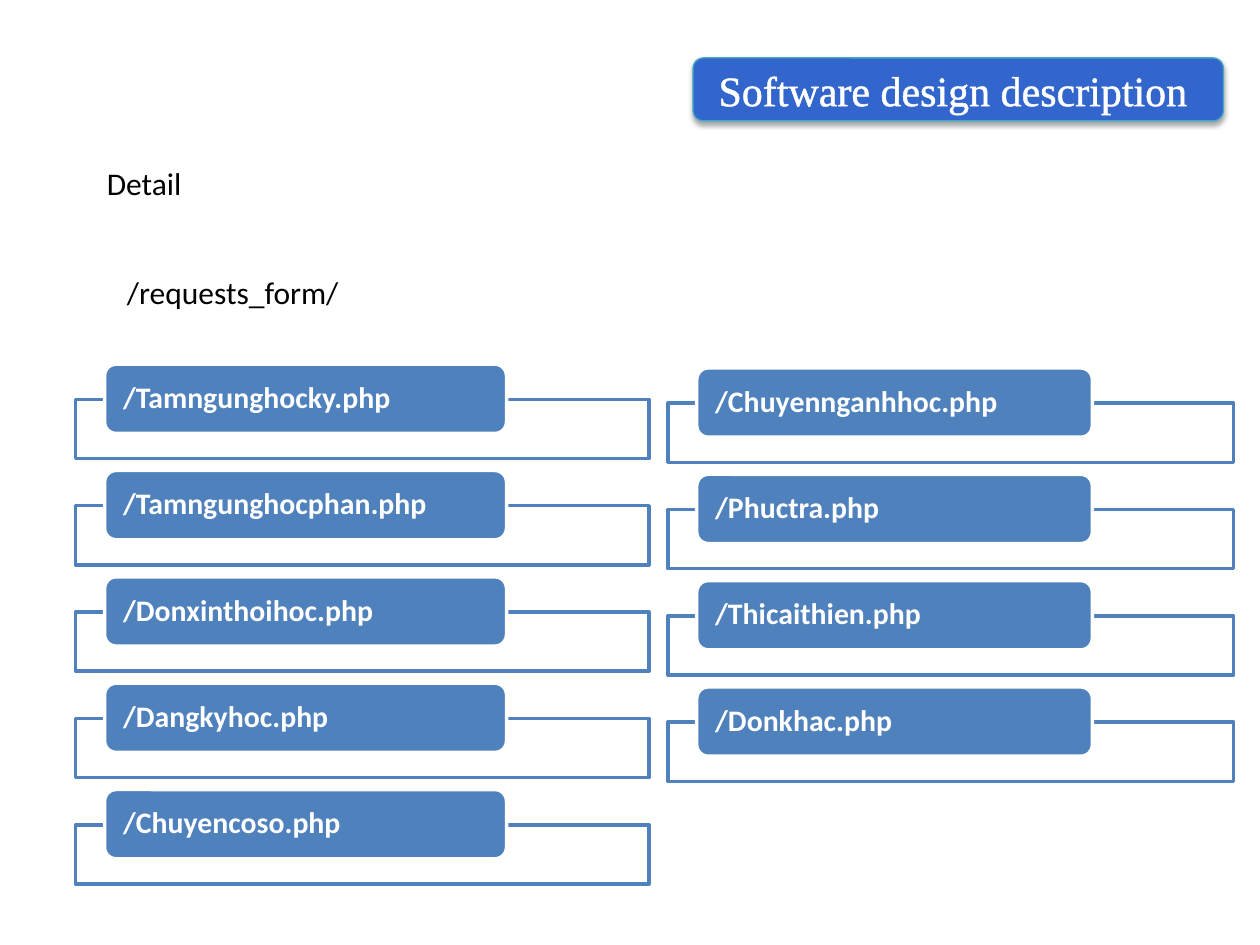
from lxml import etree
from pptx import Presentation
from pptx.dml.color import RGBColor
from pptx.enum.shapes import MSO_SHAPE
from pptx.enum.text import MSO_ANCHOR, MSO_AUTO_SIZE, PP_ALIGN
from pptx.oxml import parse_xml
from pptx.util import Inches, Pt

RECTANGLE = MSO_SHAPE.RECTANGLE
ROUNDED = MSO_SHAPE.ROUNDED_RECTANGLE
MIDDLE = MSO_ANCHOR.MIDDLE
CENTER = PP_ALIGN.CENTER
FIT_SHAPE = MSO_AUTO_SIZE.SHAPE_TO_FIT_TEXT
DRAWING = "http://schemas.openxmlformats.org/drawingml/2006/main"

BLUE = "4F81BD"
WHITE = "FFFFFF"
ROW_STEP = 0.844
COLUMNS = [
    # left, top of first frame, frame width, label width, file names
    (0.6, 3.17, 4.55, 3.19, ["/Tamngunghocky.php", "/Tamngunghocphan.php",
                             "/Donxinthoihoc.php", "/Dangkyhoc.php", "/Chuyencoso.php"]),
    (5.3, 3.2, 4.49, 3.14, ["/Chuyennganhhoc.php", "/Phuctra.php",
                            "/Thicaithien.php", "/Donkhac.php"]),
]


def add_box(shapes, kind, position, fill, line, line_width):
    shape = shapes.add_shape(kind, *[Inches(value) for value in position])
    shape.shadow.inherit = False
    shape.fill.solid()
    shape.fill.fore_color.rgb = RGBColor.from_string(fill)
    shape.line.color.rgb = RGBColor.from_string(line)
    shape.line.width = Pt(line_width)
    return shape


def write(shape, text, size, color, font_name="Calibri", bold=False):
    """Set the shape's only paragraph, format its run and return the paragraph."""
    shape.text_frame.text = text
    paragraph = shape.text_frame.paragraphs[0]
    font = paragraph.runs[0].font
    font.name = font_name
    font.size = Pt(size)
    font.bold = bold
    font.color.rgb = RGBColor.from_string(color)
    return paragraph


presentation = Presentation()
presentation.slide_width = Inches(10)
presentation.slide_height = Inches(7.5)
slide = presentation.slides.add_slide(presentation.slide_layouts[6])

# Folder name and section heading
for text, left, top, width, wrap in [
    ("/requests_form/", 0.91, 2.12, 1.9, False),
    ("Detail", 0.75, 1.25, 3.83, True),
]:
    text_box = slide.shapes.add_textbox(Inches(left), Inches(top), Inches(width), Inches(0.4))
    text_box.text_frame.word_wrap = wrap
    text_box.text_frame.auto_size = FIT_SHAPE
    write(text_box, text, 18, "000000")

# Two columns of files, each a label set over a frame
for left, first_top, frame_width, label_width, files in COLUMNS:
    group = slide.shapes.add_group_shape()
    for row, file_name in enumerate(files):
        top = first_top + row * ROW_STEP
        frame = add_box(group.shapes, RECTANGLE, (left, top, frame_width, 0.47), WHITE, BLUE, 2)
        frame_color = frame.fill._xPr.find(f"{{{DRAWING}}}solidFill")[0]
        etree.SubElement(frame_color, f"{{{DRAWING}}}alpha", val="90000")

        label = add_box(group.shapes, ROUNDED, (left + 0.23, top - 0.28, label_width, 0.55),
                        BLUE, WHITE, 2)
        text_frame = label.text_frame
        text_frame.word_wrap = True
        text_frame.vertical_anchor = MIDDLE
        text_frame.margin_left = text_frame.margin_right = Inches(0.12)
        text_frame.margin_top = text_frame.margin_bottom = 0
        paragraph = write(label, file_name, 17, WHITE, bold=True)
        paragraph.alignment = PP_ALIGN.LEFT
        paragraph.line_spacing = 0.9

# Title banner
banner = add_box(slide.shapes, ROUNDED, (5.5, 0.46, 4.21, 0.5), "3366CC", "46AAC5", 0.75)
banner.text_frame.word_wrap = True
banner.text_frame.vertical_anchor = MIDDLE
title = write(banner, "Software design description ", 24, WHITE, "Times New Roman")
title.alignment = CENTER
title.runs[0].font._element.insert(0, parse_xml(
    f'<a:ln xmlns:a="{DRAWING}" w="{Pt(1.45)}"><a:solidFill>'
    f'<a:srgbClr val="{WHITE}"/></a:solidFill></a:ln>'))
effects = banner._element.spPr.find(f"{{{DRAWING}}}effectLst")
effects.append(parse_xml(
    f'<a:outerShdw xmlns:a="{DRAWING}" blurRad="{Pt(3.1)}" dist="{Pt(1.8)}" dir="5400000" '
    'rotWithShape="0"><a:srgbClr val="000000"><a:alpha val="35000"/></a:srgbClr></a:outerShdw>'))

presentation.save("out.pptx")
